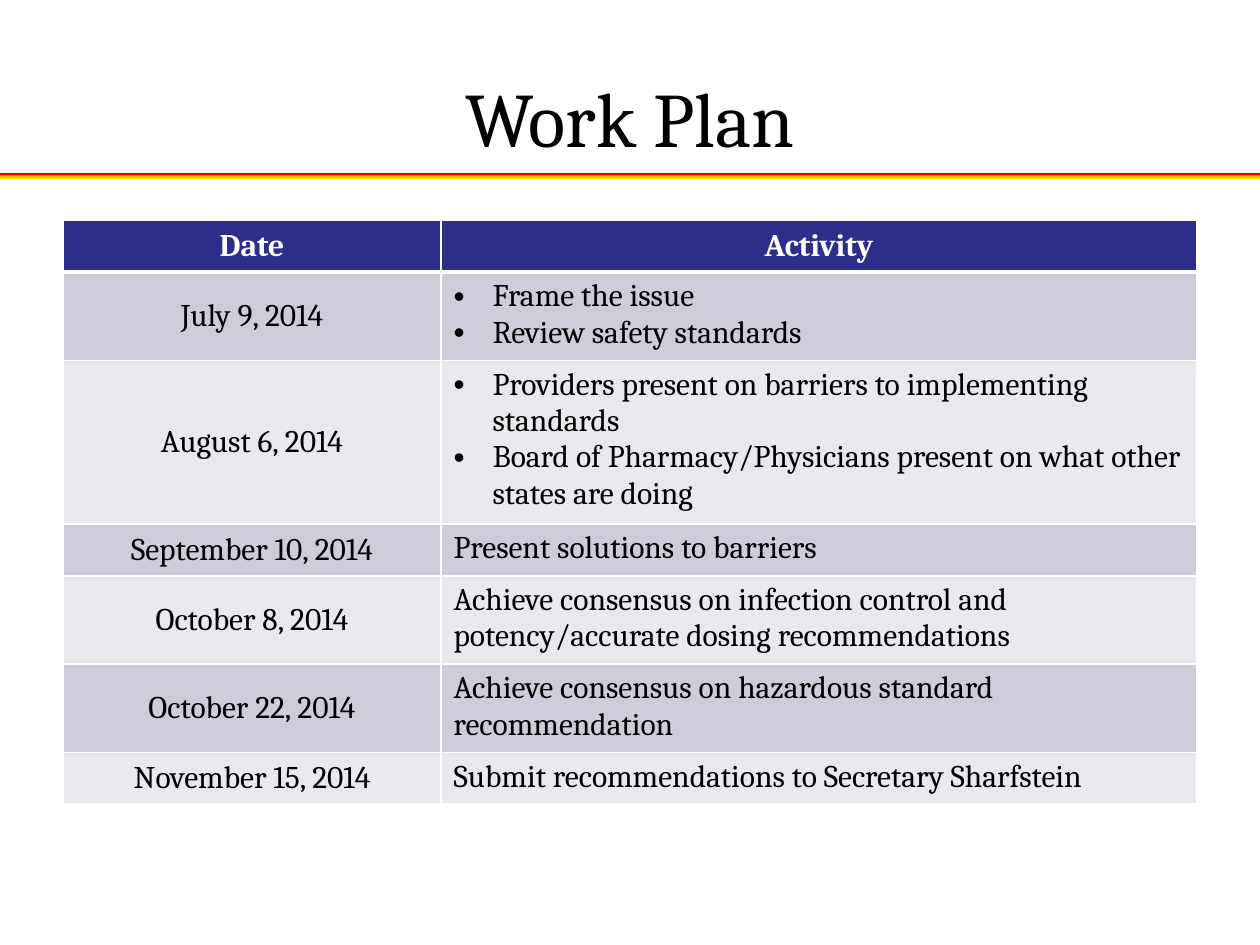
"""Build the Work Plan slide: a title, a gradient rule and a schedule table."""
import dataclasses

import pptx
import pptx.dml.color
import pptx.enum.shapes
import pptx.enum.text
import pptx.oxml
import pptx.oxml.ns
import pptx.util

Inches = pptx.util.Inches
ALIGN = pptx.enum.text.PP_ALIGN
MIDDLE = pptx.enum.text.MSO_ANCHOR.MIDDLE
TOP = pptx.enum.text.MSO_ANCHOR.TOP


@dataclasses.dataclass(frozen=True)
class Theme:
    font: str = "Cambria"
    title_size: int = 44
    table_size: int = 18
    ink: str = "000000"
    white: str = "FFFFFF"
    header: str = "2D2D8A"
    bands: tuple = ("CDCDDA", "E8E8ED")
    rule: tuple = ((0, "C00000"), (30, "FF0000"), (54, "FFC000"),
                   (84, "FFC000"), (100, "FFFF00"))


theme = Theme()


def write_text(frame, lines, size=theme.table_size, color=theme.ink,
               bold=False, align=ALIGN.LEFT, bulleted=False):
    for index, line in enumerate(lines):
        para = frame.paragraphs[0] if index == 0 else frame.add_paragraph()
        para.alignment = align
        if bulleted:
            properties = para._p.get_or_add_pPr()
            properties.set("marL", str(Inches(0.31)))
            properties.set("indent", str(Inches(-0.31)))
            for tag, name, value in (("a:buFont", "typeface", "Arial"), ("a:buChar", "char", "•")):
                bullet = pptx.oxml.ns.qn(tag)
                properties.append(properties.makeelement(bullet, {name: value}))
        span = para.add_run()
        span.text = line
        span.font.name = theme.font
        span.font.size = pptx.util.Pt(size)
        span.font.bold = bold
        span.font.color.rgb = pptx.dml.color.RGBColor.from_string(color)


def add_border(cell, side, points):
    cell._tc.get_or_add_tcPr().append(pptx.oxml.parse_xml(
        f'<a:{side} {pptx.oxml.ns.nsdecls("a")} w="{pptx.util.Pt(points)}">'
        f'<a:solidFill><a:srgbClr val="{theme.white}"/></a:solidFill></a:{side}>'))


deck = pptx.Presentation()
deck.slide_width, deck.slide_height = Inches(10), Inches(7.5)
page = deck.slides.add_slide(deck.slide_layouts[6])

rule = page.shapes.add_shape(pptx.enum.shapes.MSO_SHAPE.RECTANGLE,
                             0, Inches(1.37), Inches(10), Inches(0.05))
rule.shadow.inherit = False
rule.line.fill.background()
stops = "".join(f'<a:gs pos="{place * 1000}"><a:srgbClr val="{color}"/></a:gs>'
                for place, color in theme.rule)
rule._element.spPr.insert(2, pptx.oxml.parse_xml(
    f'<a:gradFill {pptx.oxml.ns.nsdecls("a")} rotWithShape="1"><a:gsLst>{stops}</a:gsLst>'
    '<a:lin ang="5400000" scaled="0"/></a:gradFill>'))

title = page.shapes.add_textbox(Inches(0.5), Inches(0.3), Inches(9), Inches(1.25))
title.text_frame.word_wrap = True
title.text_frame.vertical_anchor = MIDDLE
write_text(title.text_frame, ["Work Plan"], size=theme.title_size, align=ALIGN.CENTER)

schedule = [
    ("Date", ["Activity"]),
    ("July 9, 2014", ["Frame the issue", "Review safety standards"]),
    ("August 6, 2014", ["Providers present on barriers to implementing standards",
                        "Board of Pharmacy/Physicians present on what other states are doing"]),
    ("September 10, 2014", ["Present solutions to barriers"]),
    ("October 8, 2014", ["Achieve consensus on infection control and "
                         "potency/accurate dosing recommendations"]),
    ("October 22, 2014", ["Achieve consensus on hazardous standard recommendation"]),
    ("November 15, 2014", ["Submit recommendations to Secretary Sharfstein"]),
]
row_height = Inches(0.41)
table = page.shapes.add_table(len(schedule), 2, Inches(0.5), Inches(1.75),
                              Inches(9), row_height * len(schedule)).table
table.columns[0].width, table.columns[1].width = Inches(3), Inches(6)

for row, (date, activities) in enumerate(schedule):
    is_header = row == 0
    table.rows[row].height = row_height
    fill = theme.header if is_header else theme.bands[(row - 1) % 2]
    for column, lines in enumerate(([date], activities)):
        cell = table.cell(row, column)
        centered = is_header or column == 0
        cell.vertical_anchor = MIDDLE if centered else TOP
        for side in ("lnL", "lnR", "lnT", "lnB"):
            heavy = (row, side) in ((0, "lnB"), (1, "lnT"))
            add_border(cell, side, 3 if heavy else 1)
        cell.fill.solid()
        cell.fill.fore_color.rgb = pptx.dml.color.RGBColor.from_string(fill)
        write_text(cell.text_frame, lines, bold=is_header,
                   color=theme.white if is_header else theme.ink,
                   align=ALIGN.CENTER if centered else ALIGN.LEFT,
                   bulleted=len(lines) > 1)

deck.save("out.pptx")
